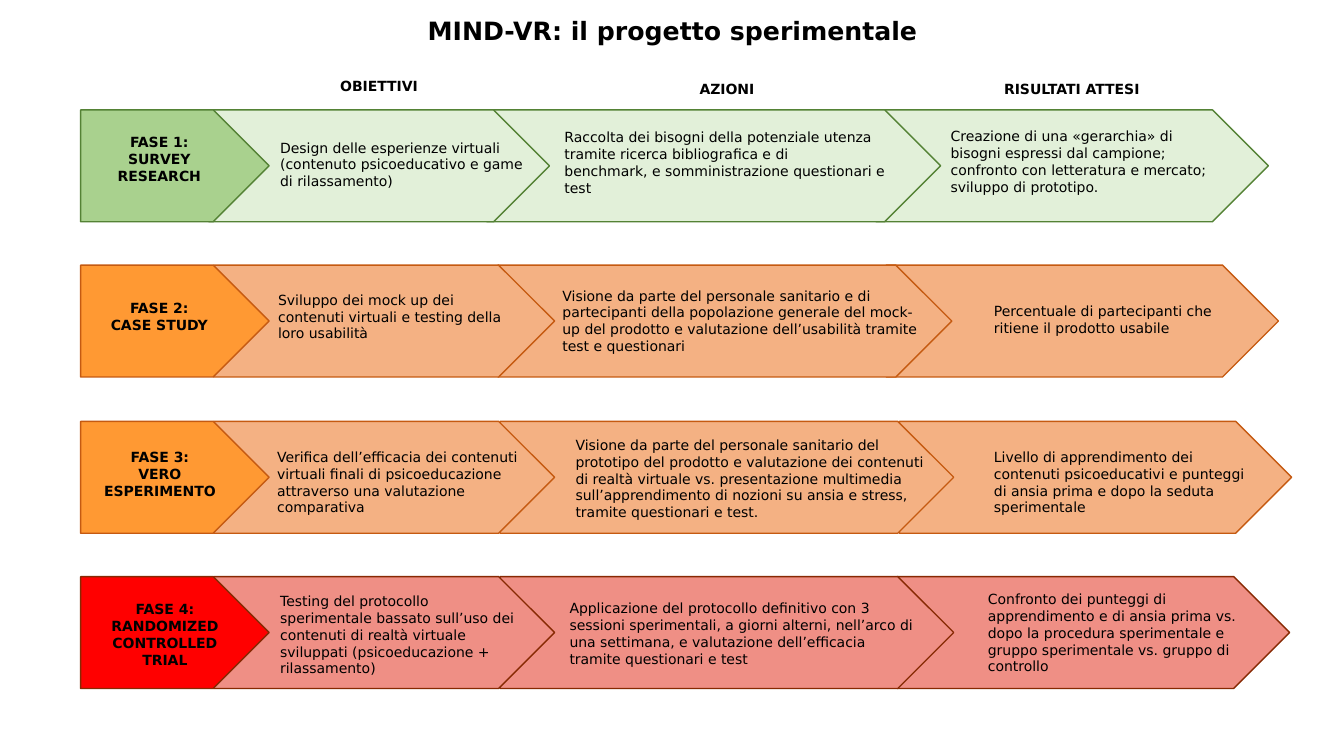
from dataclasses import dataclass

import pptx
import pptx.dml.color
import pptx.enum.shapes
import pptx.enum.text
import pptx.slide
import pptx.util

Inches = pptx.util.Inches
RGBColor = pptx.dml.color.RGBColor
ALIGN = pptx.enum.text.PP_ALIGN

FONT = "DejaVu Sans"
BLACK = RGBColor(0x00, 0x00, 0x00)
GREEN = RGBColor(0xA9, 0xD1, 0x8E)
GREEN_LIGHT = RGBColor(0xE2, 0xF0, 0xD9)
GREEN_DARK = RGBColor(0x54, 0x82, 0x35)
ORANGE = RGBColor(0xFF, 0x99, 0x33)
ORANGE_LIGHT = RGBColor(0xF4, 0xB1, 0x83)
ORANGE_DARK = RGBColor(0xC5, 0x5A, 0x11)
RED = RGBColor(0xFF, 0x00, 0x00)
RED_LIGHT = RGBColor(0xEF, 0x8F, 0x85)
RED_DARK = RGBColor(0x87, 0x29, 0x03)

# Arrow widths: phase, objectives, actions, results
ARROW_WIDTHS = (1.87, 3.38, 4.5, 3.89)
ARROW_HEIGHT = 1.11
LINE_HEIGHT = 0.165
INSETS = 0.11


@dataclass
class Label:
    text: str
    left: float
    top: float
    width: float
    lines: int = 1


@dataclass
class Phase:
    top: float
    head: RGBColor
    body: RGBColor
    line: RGBColor
    lefts: tuple[float, ...]
    labels: tuple[Label, ...]


HEADINGS = (
    Label("OBIETTIVI", 3.11, 0.72, 1.3),
    Label("AZIONI", 6.56, 0.75, 1.3),
    Label("RISULTATI ATTESI", 9.6, 0.75, 2.06),
)

PHASES = (
    Phase(1.09, GREEN, GREEN_LIGHT, GREEN_DARK, (0.8, 2.07, 4.83, 8.69), (
        Label("FASE 1:\nSURVEY RESEARCH", 0.93, 1.28, 1.3, 3),
        Label("Design delle esperienze virtuali (contenuto psicoeducativo e game "
              "di rilassamento)", 2.68, 1.33, 2.62, 3),
        Label("Raccolta dei bisogni della potenziale utenza tramite ricerca "
              "bibliografica e di\nbenchmark, e somministrazione questionari e test",
              5.5, 1.23, 3.42, 4),
        Label("Creazione di una «gerarchia» di bisogni espressi dal campione; "
              "confronto con letteratura e mercato; sviluppo di prototipo.",
              9.33, 1.22, 2.81, 4),
    )),
    Phase(2.63, ORANGE, ORANGE_LIGHT, ORANGE_DARK, (0.8, 2.12, 4.94, 8.79), (
        Label("FASE 2:\nCASE STUDY", 0.93, 2.92, 1.3, 2),
        Label("Sviluppo dei mock up dei contenuti virtuali e testing della loro "
              "usabilità", 2.66, 2.84, 2.62, 3),
        Label("Visione da parte del personale sanitario e di partecipanti della "
              "popolazione generale del mock-up del prodotto e valutazione "
              "dell’usabilità tramite test e questionari", 5.48, 2.8, 3.77, 4),
        Label("Percentuale di partecipanti che ritiene il prodotto usabile",
              9.76, 2.95, 2.6, 2),
    )),
    Phase(4.18, ORANGE, ORANGE_LIGHT, ORANGE_DARK, (0.8, 2.12, 4.96, 8.92), (
        Label("FASE 3:\nVERO ESPERIMENTO", 0.89, 4.4, 1.39, 3),
        Label("Verifica dell’efficacia dei contenuti virtuali finali di "
              "psicoeducazione attraverso una valutazione comparativa",
              2.65, 4.4, 2.62, 4),
        Label("Visione da parte del personale sanitario del prototipo del prodotto "
              "e valutazione dei contenuti di realtà virtuale vs. presentazione "
              "multimedia sull’apprendimento di nozioni su ansia e stress, "
              "tramite questionari e test.", 5.61, 4.28, 3.68, 5),
        Label("Livello di apprendimento dei contenuti psicoeducativi e punteggi "
              "di ansia prima e dopo la seduta sperimentale", 9.76, 4.4, 2.84, 4),
    )),
    Phase(5.72, RED, RED_LIGHT, RED_DARK, (0.8, 2.12, 4.96, 8.9), (
        Label("FASE 4:\nRANDOMIZED CONTROLLED\nTRIAL", 0.94, 5.91, 1.39, 4),
        Label("Testing del protocollo sperimentale bassato sull’uso dei contenuti "
              "di realtà virtuale sviluppati (psicoeducazione + rilassamento)",
              2.68, 5.83, 2.62, 5),
        Label("Applicazione del protocollo definitivo con 3 sessioni sperimentali, "
              "a giorni alterni, nell’arco di una settimana, e valutazione "
              "dell’efficacia tramite questionari e test", 5.55, 5.9, 3.68, 4),
        Label("Confronto dei punteggi di apprendimento e di ansia prima vs. dopo "
              "la procedura sperimentale e gruppo sperimentale vs. gruppo di "
              "controllo", 9.7, 5.81, 2.73, 5),
    )),
)


def add_label(slide: pptx.slide.Slide, label: Label, *, size: float = 10,
              bold: bool = False, align: ALIGN = ALIGN.LEFT) -> None:
    height = label.lines * LINE_HEIGHT * size / 10 + INSETS
    sp = slide.shapes.add_textbox(Inches(label.left), Inches(label.top),
                                  Inches(label.width), Inches(height))
    tf = sp.text_frame
    tf.word_wrap = True
    tf.auto_size = pptx.enum.text.MSO_AUTO_SIZE.SHAPE_TO_FIT_TEXT
    tf.text = label.text
    for p in tf.paragraphs:
        p.alignment = align
        for r in p.runs:
            r.font.name = FONT
            r.font.size = pptx.util.Pt(size)
            r.font.bold = bold
            r.font.color.rgb = BLACK


def add_arrow(slide: pptx.slide.Slide, left: float, top: float, width: float,
              fill: RGBColor, line: RGBColor) -> None:
    sp = slide.shapes.add_shape(pptx.enum.shapes.MSO_SHAPE.PENTAGON, Inches(left),
                                Inches(top), Inches(width), Inches(ARROW_HEIGHT))
    sp.shadow.inherit = False
    sp.fill.solid()
    sp.fill.fore_color.rgb = fill
    sp.line.color.rgb = line
    sp.line.width = pptx.util.Pt(1)


def add_phase(slide: pptx.slide.Slide, phase: Phase) -> None:
    # Right to left, so that each arrow tip covers the next arrow
    for i in reversed(range(len(ARROW_WIDTHS))):
        fill = phase.body if i else phase.head
        add_arrow(slide, phase.lefts[i], phase.top, ARROW_WIDTHS[i], fill, phase.line)
    name, *details = phase.labels
    add_label(slide, name, bold=True, align=ALIGN.CENTER)
    for detail in details:
        add_label(slide, detail)


def main() -> None:
    prs = pptx.Presentation()
    prs.slide_width, prs.slide_height = Inches(13.33), Inches(7.5)
    slide = prs.slides.add_slide(prs.slide_layouts[6])

    # Title and column headings
    title = Label("MIND-VR: il progetto sperimentale", 0.48, 0.1, 12.38)
    add_label(slide, title, size=18, bold=True, align=ALIGN.CENTER)
    for heading in HEADINGS:
        add_label(slide, heading, bold=True, align=ALIGN.CENTER)

    # One row of arrows per phase
    for phase in PHASES:
        add_phase(slide, phase)

    prs.save("out.pptx")


if __name__ == "__main__":
    main()
